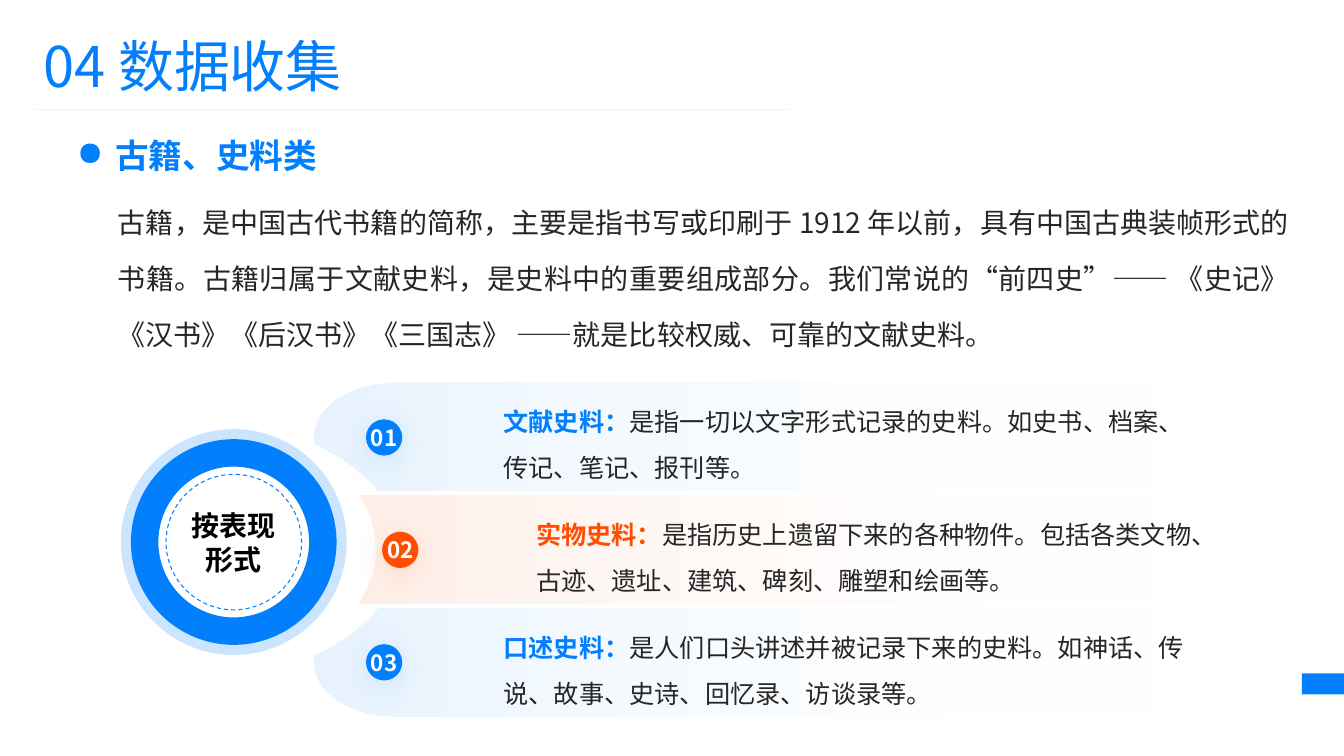
from dataclasses import dataclass

from lxml import etree
from pptx import Presentation
from pptx import util as u
from pptx.dml.color import RGBColor
from pptx.enum import dml, shapes, text
from pptx.oxml.ns import qn

Pt = u.Pt


@dataclass(frozen=True)
class Theme:
    font: str = "Noto Sans CJK SC"
    blue: str = "027FFD"
    orange: str = "FF4E01"
    ink: str = "262626"
    black: str = "000000"
    white: str = "FFFFFF"
    rule: str = "F2F2F2"
    blue_glow: str = "9ACCFE"
    orange_glow: str = "FFB899"
    title: int = 40
    heading: int = 24
    body: int = 20
    band: int = 18
    badge: int = 16


def add_xml(parent, tag, **attributes):
    return etree.SubElement(parent, qn(tag), {k: str(v) for k, v in attributes.items()})


def add_alpha(shape, *percents):
    for color, percent in zip(shape.element.spPr.xpath(".//a:srgbClr"), percents):
        add_xml(color, "a:alpha", val=percent * 1000)


def curve(*controls, steps=24):
    a, b, c, d = controls
    for step in range(steps + 1):
        t = step / steps
        s = 1 - t
        yield tuple(s**3 * p + 3 * s * s * t * q + 3 * s * t * t * r + t**3 * w
                    for p, q, r, w in zip(a, b, c, d))


def write(frame, content, *, font, size, color, bold=False, lead="", lead_color=None,
          align=text.PP_ALIGN.LEFT, anchor=text.MSO_ANCHOR.TOP, wrap=True,
          spacing=None, insets=(0, 0, 0, 0)):
    frame.word_wrap = wrap
    frame.vertical_anchor = anchor
    (frame.margin_left, frame.margin_top,
     frame.margin_right, frame.margin_bottom) = map(Pt, insets)
    for index, line in enumerate(content.split("\n")):
        paragraph = frame.add_paragraph() if index else frame.paragraphs[0]
        paragraph.alignment = align
        paragraph.line_spacing = spacing
        parts = [(line, color, bold)]
        if lead:
            parts.insert(0, (lead, lead_color, True))
        for words, tint, weight in parts:
            run = paragraph.add_run()
            run.text = words
            run.font.name = font
            run.font.size = Pt(size)
            run.font.bold = weight
            run.font.color.rgb = RGBColor.from_string(tint)
            add_xml(run.font._element, "a:ea", typeface=font)


class Page:
    def __init__(self, slide, theme):
        self.slide = slide
        self.theme = theme

    def title(self, content, box):
        heading = self.slide.shapes.title
        heading.left, heading.top, heading.width, heading.height = map(Pt, box)
        write(heading.text_frame, content, font=self.theme.font, size=self.theme.title,
              color=self.theme.blue, insets=(7.2, 3.6, 7.2, 3.6))
        heading.text_frame.auto_size = text.MSO_AUTO_SIZE.SHAPE_TO_FIT_TEXT

    def textbox(self, content, box, **style):
        words = self.slide.shapes.add_textbox(*map(Pt, box))
        write(words.text_frame, content, font=self.theme.font, **style)
        return words

    def bulleted(self, content, box, indent, **style):
        words = self.textbox(content, box, **style)
        properties = words.text_frame.paragraphs[0]._p.get_or_add_pPr()
        properties.set("marL", str(Pt(indent)))
        properties.set("indent", str(-Pt(indent)))
        add_xml(properties, "a:buChar", char="●")

    def rule(self, left, right, y):
        line = self.slide.shapes.add_connector(
            shapes.MSO_CONNECTOR.STRAIGHT, Pt(left), Pt(y), Pt(right), Pt(y))
        line.line.color.rgb = RGBColor.from_string(self.theme.rule)
        line.line.width = Pt(0.5)
        add_xml(line.element.spPr, "a:effectLst")

    def preset(self, kind, box, fill=None):
        shape = self.slide.shapes.add_shape(kind, *map(Pt, box))
        shape.shadow.inherit = False
        shape.line.fill.background()
        if fill:
            shape.fill.solid()
            shape.fill.fore_color.rgb = RGBColor.from_string(fill)
        else:
            shape.fill.background()
        return shape

    def circle(self, kind, center, diameter, fill=None):
        x, y = center
        return self.preset(kind, (x - diameter / 2, y - diameter / 2, diameter, diameter), fill)

    def ring(self, center, diameter, thickness, opacity):
        ring = self.circle(shapes.MSO_SHAPE.DONUT, center, diameter, self.theme.blue)
        ring.adjustments[0] = thickness / diameter
        add_alpha(ring, opacity)

    def hub(self, content, center, diameter):
        hub = self.circle(shapes.MSO_SHAPE.OVAL, center, diameter)
        hub.line.color.rgb = RGBColor.from_string(self.theme.blue)
        hub.line.width = Pt(0.75)
        hub.line.dash_style = dml.MSO_LINE.DASH
        write(hub.text_frame, content, font=self.theme.font, size=self.theme.body,
              color=self.theme.black, bold=True, align=text.PP_ALIGN.CENTER,
              anchor=text.MSO_ANCHOR.MIDDLE)

    def band(self, outline, color, term, meaning, text_left):
        start, *rest = [(Pt(x), Pt(y)) for x, y in outline]
        builder = self.slide.shapes.build_freeform(*start, scale=1.0)
        builder.add_line_segments(rest, close=True)
        band = builder.convert_to_shape()
        band.shadow.inherit = False
        band.line.fill.background()
        band.fill.gradient()
        band.fill.gradient_angle = 180
        for stop, tint in zip(band.fill.gradient_stops, (self.theme.white, color)):
            stop.color.rgb = RGBColor.from_string(tint)
        add_alpha(band, 0, 10)
        write(band.text_frame, meaning, font=self.theme.font, size=self.theme.band,
              color=self.theme.ink, lead=term, lead_color=color, spacing=1.5,
              anchor=text.MSO_ANCHOR.MIDDLE, insets=(text_left, 3.6, 7.2, 3.6))

    def badge(self, number, center, color, glow):
        badge = self.circle(shapes.MSO_SHAPE.OVAL, center, 25.9, color)
        effects = badge.element.spPr.find(qn("a:effectLst"))
        shadow = add_xml(effects, "a:outerShdw", blurRad=Pt(20), dist=Pt(4),
                         dir=5400000, algn="t", rotWithShape=0)
        add_xml(add_xml(shadow, "a:srgbClr", val=glow), "a:alpha", val=40000)
        write(badge.text_frame, number, font=self.theme.font, size=self.theme.badge,
              color=self.theme.white, bold=True, wrap=False,
              align=text.PP_ALIGN.CENTER, anchor=text.MSO_ANCHOR.MIDDLE)


def main():
    deck = Presentation()
    deck.slide_width, deck.slide_height = Pt(960), Pt(540)
    theme = Theme()
    page = Page(deck.slides.add_slide(deck.slide_layouts[5]), theme)

    page.preset(shapes.MSO_SHAPE.RECTANGLE, (930, 481, 30, 15), theme.blue)
    page.title("04 数据收集", (23.8, 18.7, 553, 55.4))
    page.rule(25.2, 563.8, 77.8)

    hub_center = (167, 387.2)
    page.hub("按表现\n形式", hub_center, 96.8)

    right = 861.8
    upper = [*curve((283.7, 273.6), (251.3, 273.6), (224.6, 290.2), (224.6, 311)),
             *curve((224.6, 317.5), (244.1, 326.2), (259.2, 337.7), (270, 350.6)),
             (right, 350.6), (right, 273.6)]
    lower = [(x, 785.5 - y) for x, y in upper]
    middle = [*curve((255.6, 431.3), (272.9, 408.2), (272.9, 377.3), (256.3, 354.2)),
              (right, 354.2), (right, 431.3)]
    sources = [
        (upper, theme.blue, theme.blue_glow, 274.4, 135, "文献史料：",
         "是指一切以文字形式记录的史料。如史书、档案、传记、笔记、报刊等。"),
        (middle, theme.orange, theme.orange_glow, 285.9, 127.4, "实物史料：",
         "是指历史上遗留下来的各种物件。包括各类文物、古迹、遗址、建筑、碑刻、雕塑和绘画等。"),
        (lower, theme.blue, theme.blue_glow, 274.4, 135, "口述史料：",
         "是人们口头讲述并被记录下来的史料。如神话、传说、故事、史诗、回忆录、访谈录等。"),
    ]
    for outline, color, _, _, text_left, term, meaning in sources:
        page.band(outline, color, term, meaning, text_left)

    page.ring(hub_center, 161.3, 21.6, 20)
    page.ring(hub_center, 146.9, 19.6, 100)
    for index, (_, color, glow, x, *_) in enumerate(sources):
        page.badge(f"{index + 1:02}", (x, 312.5 + 80.3 * index), color, glow)

    page.bulleted("古籍、史料类", (55, 93.6, 250, 31.7), 27.4, size=theme.heading,
                  color=theme.blue, bold=True, anchor=text.MSO_ANCHOR.BOTTOM)
    page.textbox(
        "古籍，是中国古代书籍的简称，主要是指书写或印刷于 1912 年以前，具有中国古典装帧形式的书籍。"
        "古籍归属于文献史料，是史料中的重要组成部分。我们常说的“前四史”—— "
        "《史记》《汉书》《后汉书》《三国志》 ——就是比较权威、可靠的文献史料。",
        (84.2, 131, 836.6, 150.5), size=theme.body, color=theme.ink,
        align=text.PP_ALIGN.JUSTIFY, spacing=Pt(40))

    deck.save("out.pptx")


if __name__ == "__main__":
    main()
